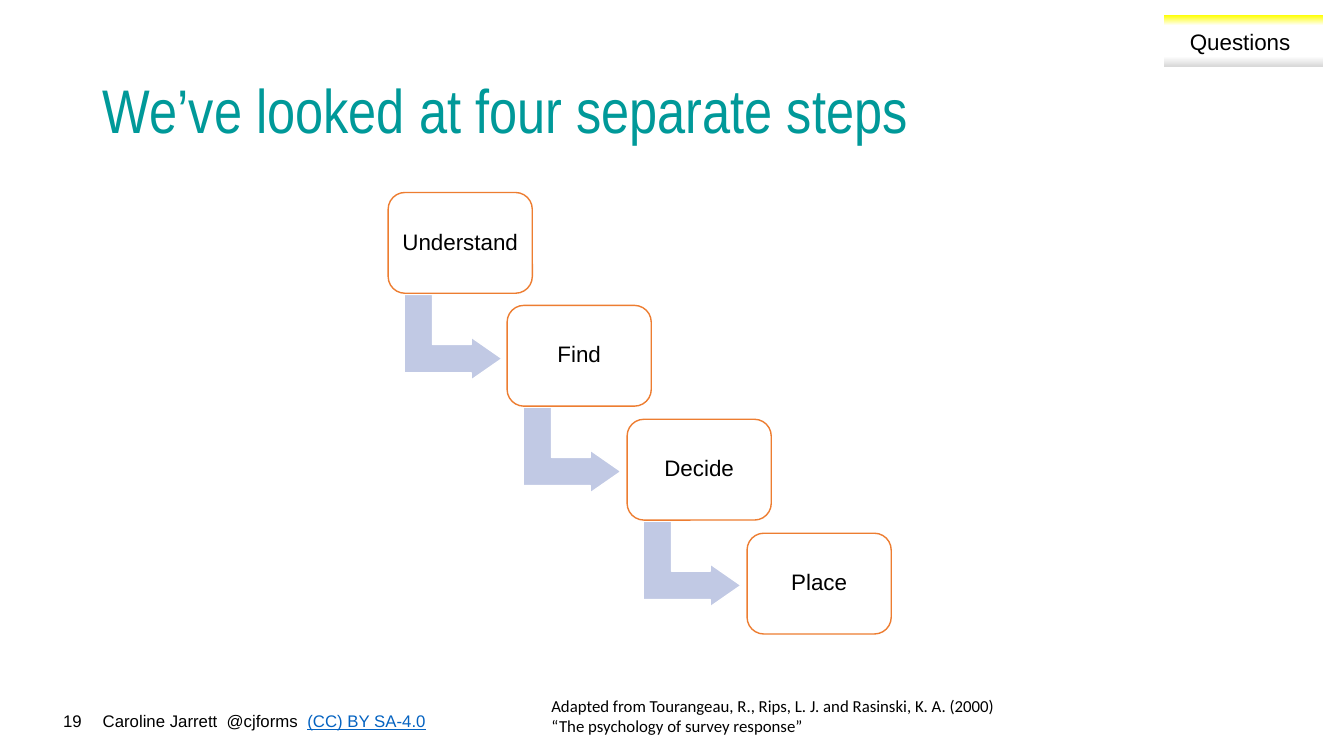
from copy import deepcopy
from dataclasses import dataclass

from pptx import Presentation
from pptx import util as u
from pptx.dml.color import RGBColor
from pptx.enum import shapes, text

PX = 9144  # EMU in one px, 100 px to the inch


@dataclass(frozen=True)
class Theme:
    ink: str = "000000"
    paper: str = "FFFFFF"
    teal: str = "009999"
    orange: str = "ED7D31"
    arrow: str = "C1C9E4"
    link: str = "0563C1"
    body: str = "Arial"
    head: str = "Arial Narrow"
    cite: str = "Calibri"
    big: int = 44
    mid: int = 16
    small: int = 12
    tag: tuple = ((0, "FFFF00"), (0.2, "FFFFFF"), (0.8, "FFFFFF"), (1, "D9D9D9"))


T = Theme()
STEPS = ("Understand", "Find", "Decide", "Place")


def rgb(code):
    return RGBColor.from_string(code)


def place(*box):
    return [u.Emu(n * PX) for n in box]


def style(run, size, color=T.ink, font=T.body):
    run.font.size = u.Pt(size)
    run.font.name = font
    run.font.color.rgb = rgb(color)


def label(slide, box, words, size, color=T.ink, font=T.body, align="LEFT", anchor="TOP"):
    frame = slide.shapes.add_textbox(*place(*box)).text_frame
    frame.word_wrap = True
    frame.vertical_anchor = getattr(text.MSO_ANCHOR, anchor)
    frame.text = words
    para = frame.paragraphs[0]
    para.alignment = getattr(text.PP_ALIGN, align)
    for run in para.runs:
        style(run, size, color, font)
    return para


def block(slide, kind, box, fill, line):
    shape = slide.shapes.add_shape(kind, *place(*box))
    shape.shadow.inherit = False
    shape.fill.solid()
    shape.fill.fore_color.rgb = rgb(fill)
    shape.line.color.rgb = rgb(line)
    shape.line.width = u.Pt(1)
    return shape


def bend(slide, x, y):
    arrow = block(slide, shapes.MSO_SHAPE.BENT_UP_ARROW, (x, y, 85, 97), T.arrow, T.paper)
    arrow.rotation = 90
    for i, value in enumerate((0.33, 0.25, 0.36)):
        arrow.adjustments[i] = value


def step(slide, x, y, name):
    card = block(slide, shapes.MSO_SHAPE.ROUNDED_RECTANGLE, (x, y, 143, 100), T.paper, T.orange)
    frame = card.text_frame
    frame.margin_left = frame.margin_right = u.Emu(7 * PX)
    frame.vertical_anchor = text.MSO_ANCHOR.MIDDLE
    frame.text = name
    para = frame.paragraphs[0]
    para.alignment = text.PP_ALIGN.CENTER
    para.line_spacing = 0.9
    style(para.runs[0], T.mid)


def tag(slide, words):
    band = slide.shapes.add_shape(shapes.MSO_SHAPE.RECTANGLE, *place(1154, 15, 158, 51))
    band.shadow.inherit = False
    band.line.fill.background()
    band.fill.gradient()
    band.fill.gradient_angle = 270
    # A new gradient has two stops: repeat them to get four
    stops = band.fill._fill._gradFill.gsLst
    for stop in list(stops):
        stops.append(deepcopy(stop))
    for stop, (pos, color) in zip(band.fill.gradient_stops, T.tag):
        stop.position = pos
        stop.color.rgb = rgb(color)
    label(slide, (1152, 23, 156, 37), words, T.mid, align="CENTER")


def main():
    deck = Presentation()
    deck.slide_width, deck.slide_height = place(1333, 750)
    slide = deck.slides.add_slide(deck.slide_layouts[6])

    # Footer
    para = label(slide, (92, 700, 445, 30), "Caroline Jarrett  @cjforms  ", T.small)
    link = para.add_run()
    link.text = "(CC) BY SA-4.0"
    style(link, T.small, T.link)
    link.font.underline = True
    label(slide, (0, 700, 91, 30), "19", T.small, align="RIGHT")

    # Title
    title = label(slide, (92, 40, 1150, 145), "We’ve looked at four separate steps",
                  T.big, T.teal, T.head, anchor="MIDDLE")
    title.line_spacing = 0.9

    # Staircase of steps, an arrow below each but the last
    last = len(STEPS) - 1
    for i, name in enumerate(STEPS):
        x, y = 385 + 356 * i // last, 191 + 338 * i // last
        if i < last:
            bend(slide, x + 22, y + 95)
        step(slide, x, y, name)

    # Citation and section tag
    label(slide, (537, 685, 624, 50),
          "Adapted from Tourangeau, R., Rips, L. J. and Rasinski, K. A. (2000)\v"
          "“The psychology of survey response”", T.small, font=T.cite)
    tag(slide, "Questions")

    deck.save("out.pptx")


if __name__ == "__main__":
    main()
